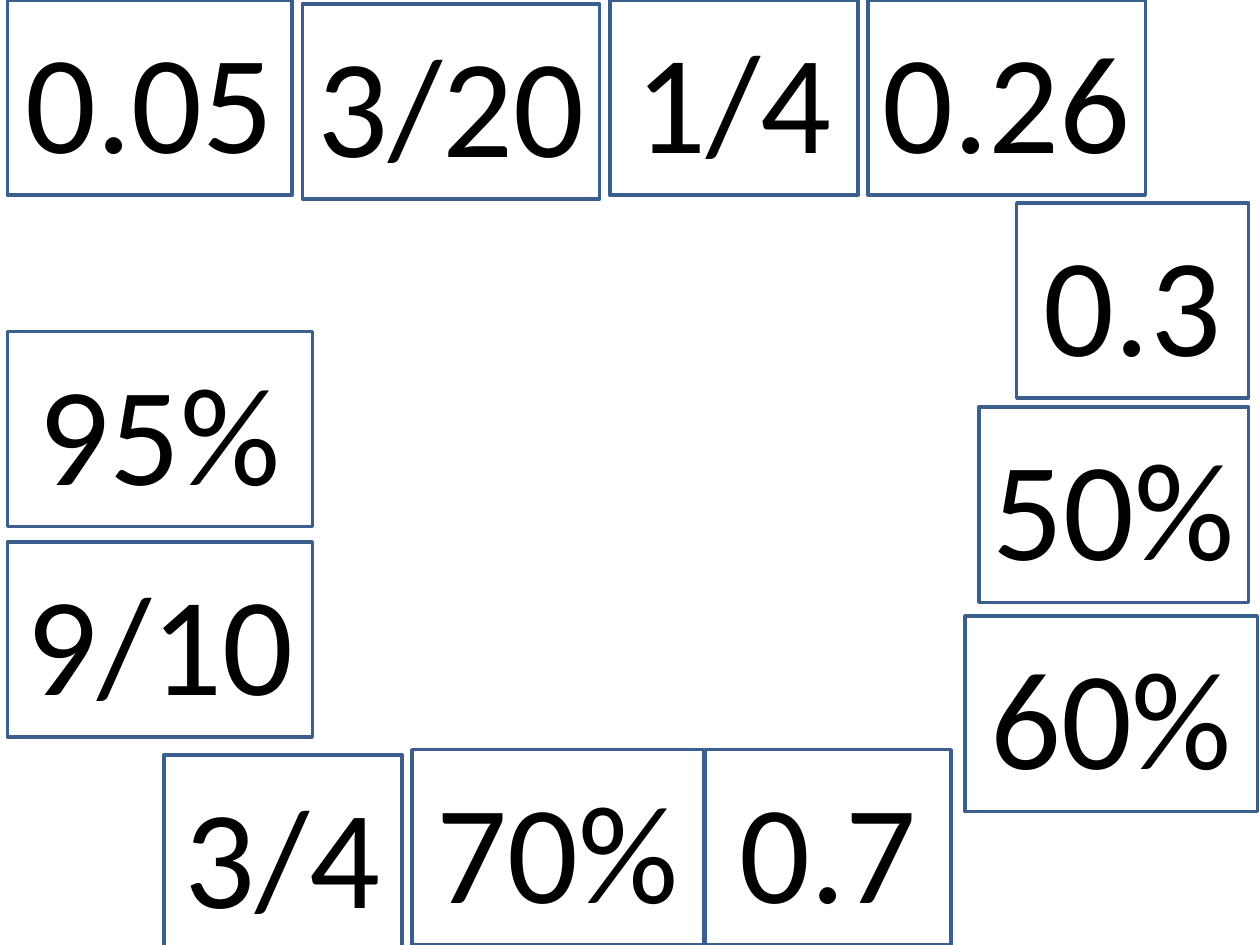
from dataclasses import dataclass

from pptx import Presentation
from pptx.dml.color import RGBColor
from pptx.enum.shapes import MSO_SHAPE
from pptx.enum.text import MSO_ANCHOR, PP_ALIGN
from pptx.slide import Slide
from pptx.util import Pt

WHITE = RGBColor(0xFF, 0xFF, 0xFF)
BLACK = RGBColor(0x00, 0x00, 0x00)
BORDER_BLUE = RGBColor(0x3A, 0x5F, 0x8C)

CARD_HEIGHT = 111.6
LEFT_EDGE = 4.3
BOTTOM_ROW = 428.4


@dataclass(frozen=True)
class NumberCard:
    text: str
    left: float
    top: float
    width: float


CARDS = [
    NumberCard("50%", 559.4, 232.6, 154.1),
    NumberCard("0.3", 581, 115.9, 132.5),
    NumberCard("1/4", 348.5, 0, 141.8),
    NumberCard("9/10", LEFT_EDGE, 309.6, 174.2),
    NumberCard("0.05", LEFT_EDGE, 0, 162.7),
    NumberCard("70%", 235.4, BOTTOM_ROW, 167),
    NumberCard("95%", LEFT_EDGE, 189.4, 174.2),
    NumberCard("0.7", 403.2, BOTTOM_ROW, 140.4),
    NumberCard("3/4", 93.6, 431.3, 136.1),
    NumberCard("0.26", 496.1, 0, 158.4),
    NumberCard("3/20", 172.8, 2.2, 169.9),
    NumberCard("60%", 551.5, 352.1, 167),
]


def draw_card(slide: Slide, card: NumberCard) -> None:
    shape = slide.shapes.add_shape(
        MSO_SHAPE.RECTANGLE,
        Pt(card.left), Pt(card.top), Pt(card.width), Pt(CARD_HEIGHT),
    )
    shape.shadow.inherit = False
    shape.fill.solid()
    shape.fill.fore_color.rgb = WHITE
    shape.line.color.rgb = BORDER_BLUE
    shape.line.width = Pt(2)

    shape.text_frame.vertical_anchor = MSO_ANCHOR.MIDDLE
    paragraph = shape.text_frame.paragraphs[0]
    paragraph.alignment = PP_ALIGN.CENTER
    run = paragraph.add_run()
    run.text = card.text
    run.font.name = "Calibri"
    run.font.size = Pt(80)
    run.font.color.rgb = BLACK


def main() -> None:
    presentation = Presentation()
    presentation.slide_width = Pt(720)
    presentation.slide_height = Pt(540)
    blank_layout = presentation.slide_layouts[6]
    slide = presentation.slides.add_slide(blank_layout)
    for card in CARDS:
        draw_card(slide, card)
    presentation.save("out.pptx")


if __name__ == "__main__":
    main()
